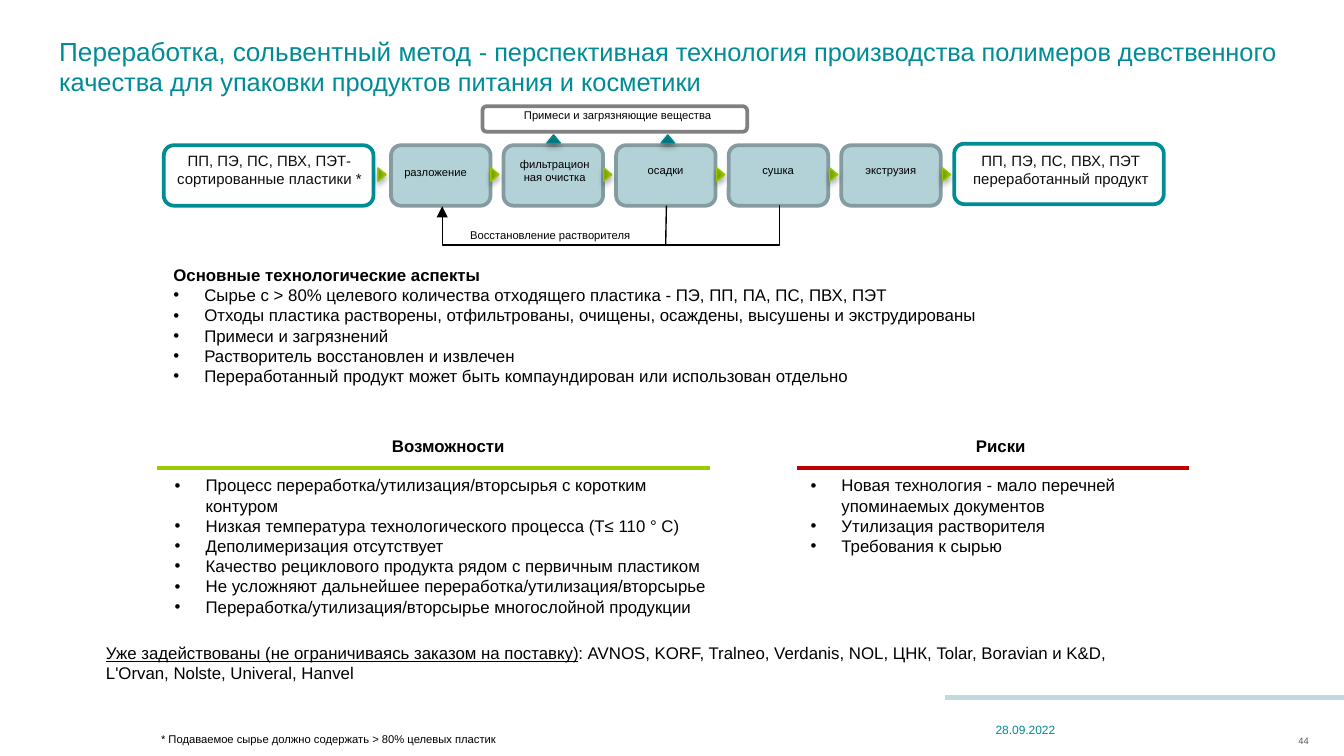
from dataclasses import dataclass

from lxml.etree import SubElement
from pptx import Presentation
from pptx.dml.color import RGBColor
from pptx.enum.shapes import MSO_CONNECTOR as Connector, MSO_SHAPE as Shape
from pptx.enum.text import MSO_ANCHOR as Anchor, MSO_AUTO_SIZE as AutoSize, PP_ALIGN as Align
from pptx.oxml.ns import qn
from pptx.util import Pt

COLORS = {
    "teal": "008C95", "black": "000000", "ink": "0D0D0D", "white": "FFFFFF",
    "gray": "808080", "page": "595959", "step": "B2D2D8", "step_edge": "849BA0",
    "lime": "99CC00", "red": "BC0000", "footer": "C0DADE",
    "teal_dark": "00686F", "teal_light": "008891",
    "lime_dark": "729800", "lime_light": "95C700",
}


@dataclass
class Box:
    left: float
    top: float
    width: float
    height: float


@dataclass
class Step:
    label: str
    offset: float = -3.4
    top: float = 84.2
    width: float = 59.8
    align: Align = Align.CENTER


@dataclass
class Section:
    heading: str
    items: list[str]
    box: Box
    align: Align = Align.CENTER
    gap: float = 10.4


STEPS = [
    Step("разложение", 0, 85, 53.3, Align.LEFT),
    Step("фильтрационная очистка", 0.7, 80.6, 53.3),
    Step("осадки"),
    Step("сушка"),
    Step("экструзия"),
]
SECTIONS = [
    Section("Основные технологические аспекты", [
        "Сырье с > 80% целевого количества отходящего пластика - ПЭ, ПП, ПА, ПС, ПВХ, ПЭТ",
        "Отходы пластика растворены, отфильтрованы, очищены, осаждены, высушены и экструдированы",
        "Примеси и загрязнений",
        "Растворитель восстановлен и извлечен",
        "Переработанный продукт может быть компаундирован или использован отдельно",
    ], Box(85.7, 138.2, 553.7, 72.7), Align.LEFT, 0),
    Section("Возможности", [
        "Процесс переработка/утилизация/вторсырья с коротким контуром",
        "Низкая температура технологического процесса (T≤ 110 ° C)",
        "Деполимеризация отсутствует",
        "Качество рециклового продукта рядом с первичным пластиком",
        "Не усложняют дальнейшее переработка/утилизация/вторсырье",
        "Переработка/утилизация/вторсырье многослойной продукции",
    ], Box(86.4, 229.7, 307.4, 105.1)),
    Section("Риски", [
        "Новая технология - мало перечней упоминаемых документов",
        "Утилизация растворителя",
        "Требования к сырью",
    ], Box(427, 229.7, 218.2, 72.7)),
]


def color(name: str) -> RGBColor:
    return RGBColor.from_string(COLORS[name])


def place(shape, box: Box) -> None:
    shape.left, shape.top = Pt(box.left), Pt(box.top)
    shape.width, shape.height = Pt(box.width), Pt(box.height)


def set_font(font, size: float, name: str = "black", bold: bool = False) -> None:
    font.name, font.size, font.bold = "Arial", Pt(size), bold
    font.color.rgb = color(name)


def clear_margins(frame) -> None:
    frame.margin_left = frame.margin_top = frame.margin_right = frame.margin_bottom = 0


def add_label(slide, lines: list[str], box: Box, size: float = 6, name: str = "black",
              align: Align = Align.LEFT):
    text_box = slide.shapes.add_textbox(Pt(box.left), Pt(box.top), Pt(box.width), Pt(box.height))
    frame = text_box.text_frame
    frame.word_wrap = True
    for index, line in enumerate(lines):
        paragraph = frame.add_paragraph() if index else frame.paragraphs[0]
        paragraph.text = line
        paragraph.alignment = align
        set_font(paragraph.font, size, name)
    return frame


def add_footer_label(slide, text: str, box: Box, size: float, name: str) -> None:
    frame = add_label(slide, [text], box, size, name, Align.RIGHT)
    clear_margins(frame)
    frame.vertical_anchor = Anchor.BOTTOM


def add_box(slide, box: Box, fill: str, edge: str) -> None:
    shape = slide.shapes.add_shape(Shape.ROUNDED_RECTANGLE, Pt(box.left), Pt(box.top),
                                   Pt(box.width), Pt(box.height))
    shape.shadow.inherit = False
    shape.fill.solid()
    shape.fill.fore_color.rgb = color(fill)
    shape.line.color.rgb = color(edge)
    shape.line.width = Pt(2)


def add_marker(slide, left: float, top: float, hue: str, rotation: float = 0) -> None:
    shape = slide.shapes.add_shape(Shape.ISOSCELES_TRIANGLE, Pt(left), Pt(top), Pt(7.2), Pt(4.3))
    shape.rotation = rotation
    shape.fill.gradient()
    shape.fill.gradient_angle = 90
    for stop, tone in zip(shape.fill.gradient_stops, ("dark", "light")):
        stop.color.rgb = color(f"{hue}_{tone}")
    shape.line.color.rgb = color(f"{hue}_light")
    shape.line.width = Pt(0.75)
    shape.shadow.inherit = False
    effects = shape._element.spPr.find(qn("a:effectLst"))
    shadow = SubElement(effects, qn("a:outerShdw"), blurRad="40000", dist="23000",
                        dir="5400000", rotWithShape="0")
    tint = SubElement(shadow, qn("a:srgbClr"), val=COLORS["black"])
    SubElement(tint, qn("a:alpha"), val="35000")


def add_line(slide, start: tuple[float, float], end: tuple[float, float], name: str = "black",
             width: float = 0.75, kind: Connector = Connector.STRAIGHT):
    line = slide.shapes.add_connector(kind, *map(Pt, start + end))
    line.line.color.rgb = color(name)
    line.line.width = Pt(width)
    SubElement(line._element.spPr, qn("a:effectLst"))
    return line


def add_recovery_loop(slide) -> None:
    loop = add_line(slide, (326.9, 19.8), (327.62, 200.5), kind=Connector.ELBOW)
    properties = loop._element.spPr
    properties.find(qn("a:xfrm")).set("rot", "5400000")
    adjustments = properties.find(qn("a:prstGeom")).find(qn("a:avLst"))
    SubElement(adjustments, qn("a:gd"), name="adj1", fmla="val 3034300")
    SubElement(properties.find(qn("a:ln")), qn("a:tailEnd"), type="triangle")


def fill_section(placeholder, section: Section) -> None:
    place(placeholder, section.box)
    frame = placeholder.text_frame
    frame.word_wrap = True
    frame.auto_size = AutoSize.NONE
    frame.vertical_anchor = Anchor.TOP
    for index, text in enumerate([section.heading, *section.items]):
        paragraph = frame.add_paragraph() if index else frame.paragraphs[0]
        paragraph.text = text
        properties = paragraph._p.get_or_add_pPr()
        indent = Pt(16.56) if index else 0
        properties.set("marL", str(indent))
        properties.set("indent", str(-indent))
        if index:
            SubElement(properties, qn("a:buChar"), char="•")
        else:
            SubElement(properties, qn("a:buNone"))
        paragraph.alignment = Align.LEFT if index else section.align
        paragraph.space_before = Pt(0)
        paragraph.space_after = Pt(0 if index else section.gap)
        set_font(paragraph.font, 9, bold=not index)


def fill_title(title) -> None:
    place(title, Box(31.7, 16.6, 668.2, 37.4))
    frame = title.text_frame
    clear_margins(frame)
    frame.word_wrap = True
    frame.auto_size = AutoSize.NONE
    frame.vertical_anchor = Anchor.MIDDLE
    paragraph = frame.paragraphs[0]
    paragraph.alignment = Align.LEFT
    for text, size in (("Переработка, cольвентный метод", 14),
                       (" - перспективная технология производства полимеров девственного"
                        " качества для упаковки продуктов питания и косметики", 13.6)):
        run = paragraph.add_run()
        run.text = text
        set_font(run.font, size, "teal")


def add_process(slide) -> None:
    add_box(slide, Box(87.8, 77.8, 112.3, 32.4), "white", "teal")
    add_label(slide, ["ПП, ПЭ, ПС, ПВХ, ПЭТ-сортированные пластики *"],
              Box(74.2, 77.8, 140.4, 26.6), 8, "ink", Align.CENTER)
    for index, step in enumerate(STEPS):
        left = 209.5 + 60.3 * index
        add_box(slide, Box(left, 77.8, 53.3, 32.4), "step", "step_edge")
        add_label(slide, [step.label], Box(left + step.offset, step.top, step.width, 14.4),
                  align=step.align)
    add_box(slide, Box(511.2, 77, 112.3, 32.4), "white", "teal")
    add_label(slide, ["ПП, ПЭ, ПС, ПВХ, ПЭТ", "переработанный продукт"],
              Box(498.2, 77.8, 140.4, 26.6), 8, "ink", Align.CENTER)
    for left in (293, 354.2):
        add_marker(slide, left, 72.3, "teal")
    for index in range(len(STEPS) + 1):
        add_marker(slide, 201 + 60.5 * index, 91.4, "lime", 90)
    add_label(slide, ["Восстановление растворителя"], Box(244.8, 118.8, 116.6, 14.4))
    add_recovery_loop(slide)
    add_line(slide, (357, 110.2), (356.6, 131.9))
    add_box(slide, Box(258.5, 56.9, 141.8, 13.7), "white", "gray")
    add_label(slide, ["Примеси и загрязняющие вещества"], Box(273.6, 54.7, 126, 14.4))


def main() -> None:
    presentation = Presentation()
    presentation.slide_width, presentation.slide_height = Pt(720), Pt(405)
    slide = presentation.slides.add_slide(presentation.slide_layouts[4])
    fill_title(slide.shapes.title)
    *bodies, spare = list(slide.placeholders)[1:]
    spare._element.getparent().remove(spare._element)
    for body, section in zip(bodies, SECTIONS):
        fill_section(body, section)
    add_line(slide, (506.2, 373.7), (720, 373.7), "footer", 2.75)
    add_line(slide, (427, 250.6), (637.2, 250.6), "red", 2.25)
    add_line(slide, (84.2, 250.6), (380.2, 250.6), "lime", 2.25)
    add_process(slide)
    frame = add_label(slide, ["Уже задействованы (не ограничиваясь заказом на поставку)"],
                      Box(49.7, 340.6, 558.7, 28.8), 9)
    paragraph = frame.paragraphs[0]
    paragraph.runs[0].font.underline = True
    paragraph.add_run().text = (": AVNOS, KORF, Tralneo, Verdanis, NOL, ЦНК, Tolar, Boravian"
                                " и K&D, L'Orvan, Nolste, Univeral, Hanvel")
    add_label(slide, ["* Подаваемое сырье должно содержать > 80% целевых пластик"],
              Box(79.2, 388.8, 470.2, 14.4))
    add_footer_label(slide, "44", Box(678.2, 385.9, 23, 13.7), 5, "page")
    add_footer_label(slide, "28.09.2022", Box(491.8, 381.6, 73.4, 13), 6.4, "teal")
    presentation.save("out.pptx")


if __name__ == "__main__":
    main()
